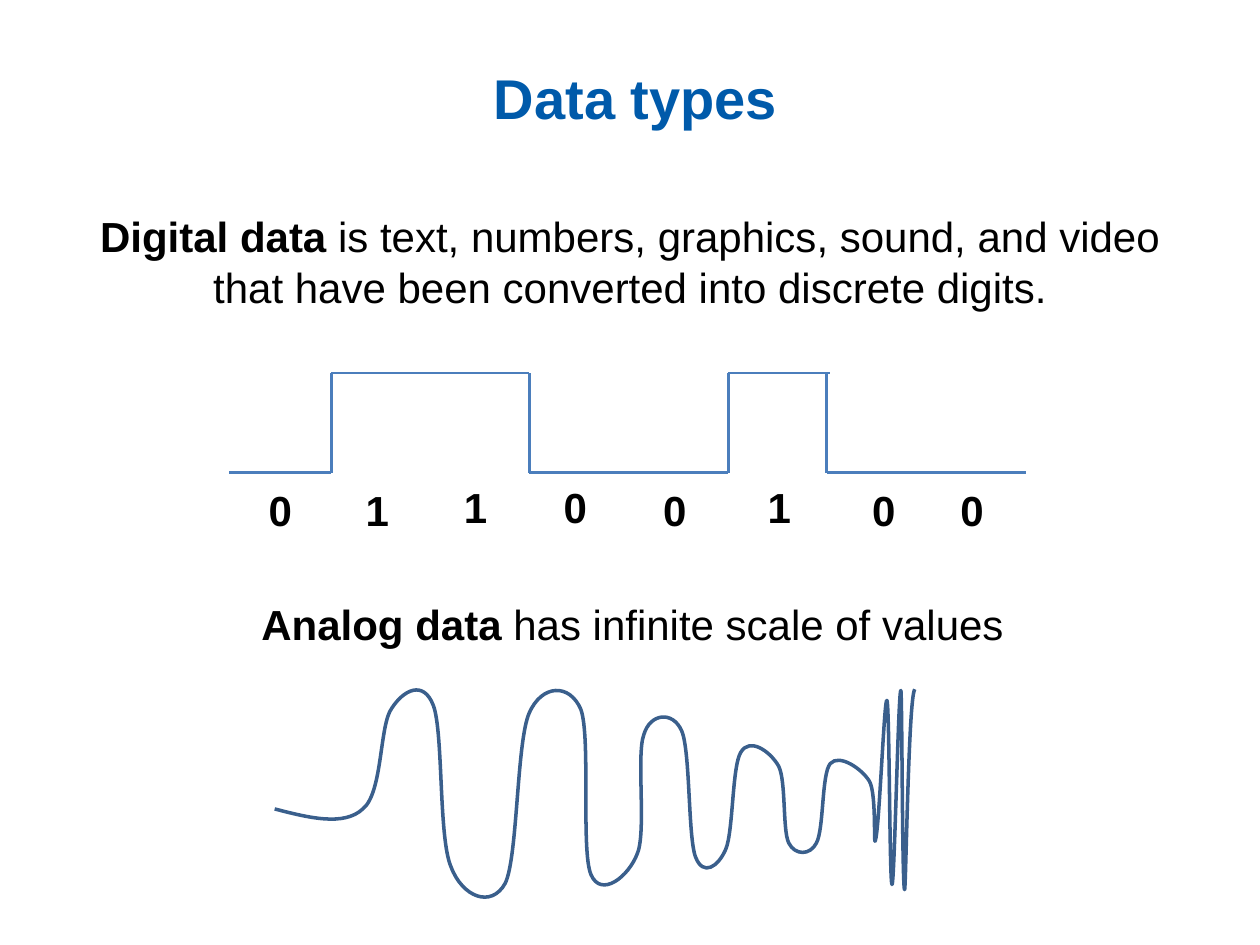
import lxml.etree
import pptx
import pptx.dml.color
import pptx.enum.shapes
import pptx.enum.text
import pptx.oxml.ns
import pptx.util

Inches = pptx.util.Inches
Pt = pptx.util.Pt
qn = pptx.oxml.ns.qn
COLORS = {"title": "005AAA", "text": "000000", "pulse": "4B7EBC", "wave": "3A5F8C"}


def color(name):
    return pptx.dml.color.RGBColor.from_string(COLORS[name])


def add_text(left, top, width, height, bold_text, plain_text="", size=24, name="text"):
    """Add a centred text box: a bold lead, then plain words."""
    box = page.shapes.add_textbox(Inches(left), Inches(top), Inches(width), Inches(height))
    box.text_frame.word_wrap = True
    para = box.text_frame.paragraphs[0]
    para.alignment = pptx.enum.text.PP_ALIGN.CENTER
    para.font.name = "Arial"
    para.font.size = Pt(size)
    para.font.color.rgb = color(name)
    for words, bold in ((bold_text, True), (plain_text, False)):
        if words:
            span = para.add_run()
            span.text = words
            span.font.bold = bold
    return box


deck = pptx.Presentation()
deck.slide_width, deck.slide_height = Inches(10), Inches(7.5)
page = deck.slides.add_slide(deck.slide_layouts[6])

title = add_text(0.05, 0, 9.99, 1.39, "Data types", size=32, name="title")
title.text_frame.margin_top = Inches(0.2)
title.text_frame.vertical_anchor = pptx.enum.text.MSO_ANCHOR.MIDDLE

digital = add_text(0.51, 1.62, 8.98, 0.91, "Digital data ",
                   "is text, numbers, graphics, sound, and video that have been "
                   "converted into discrete digits.")
analog = add_text(0.53, 4.7, 8.98, 0.5, "Analog data ", "has infinite scale of values")

# Square pulse: flat stretches, then the edges between them
HIGH, LOW = 2.96, 3.75
flats = [(1.82, 2.63, LOW), (2.63, 4.2, HIGH), (4.2, 5.78, LOW),
         (5.78, 6.59, HIGH), (6.56, 8.14, LOW)]
segments = [(start, y, end, y) for start, end, y in flats]
segments += [(x, LOW, x, HIGH) for x in (2.63, 4.2, 5.78, 6.56)]
for segment in segments:
    line = page.shapes.add_connector(pptx.enum.shapes.MSO_CONNECTOR.STRAIGHT,
                                     *[Inches(value) for value in segment])
    line.line.color.rgb = color("pulse")
    line.line.width = Pt(1.5)
    lxml.etree.SubElement(line._element.spPr, qn("a:effectLst"))

bits = [("0", 2.03, 3.79), ("1", 2.8, 3.79), ("1", 3.58, 3.77), ("0", 4.37, 3.77),
        ("0", 5.16, 3.79), ("1", 5.99, 3.77), ("0", 6.82, 3.79), ("0", 7.52, 3.79)]
bit_boxes = [add_text(left, top, 0.39, 0.5, bit) for bit, left, top in bits]
for box in bit_boxes:
    box.text_frame.word_wrap = False

for box in [digital, analog] + bit_boxes:
    box.text_frame.paragraphs[0].line_spacing = Pt(29)

# Analog wave in hundredths of an inch: two control points and an end per curve
wave_start = (218, 642)
curves = [
    ((245, 649), (273, 656), (288, 642)), ((304, 629), (301, 575), (311, 562)),
    ((320, 548), (336, 539), (344, 560)), ((352, 582), (348, 665), (358, 688)),
    ((367, 712), (390, 721), (401, 701)), ((411, 680), (410, 589), (420, 566)),
    ((430, 543), (452, 542), (461, 563)), ((469, 585), (461, 675), (469, 694)),
    ((477, 713), (499, 696), (506, 677)), ((513, 659), (505, 599), (511, 583)),
    ((516, 566), (534, 564), (541, 580)), ((548, 596), (546, 664), (552, 680)),
    ((558, 696), (570, 688), (576, 674)), ((582, 660), (581, 608), (588, 597)),
    ((595, 585), (611, 596), (618, 608)), ((624, 620), (621, 659), (626, 669)),
    ((631, 679), (643, 679), (648, 669)), ((654, 658), (652, 614), (659, 606)),
    ((666, 598), (684, 610), (690, 620)), ((696, 630), (693, 677), (695, 666)),
    ((698, 655), (702, 550), (704, 556)), ((706, 562), (706, 703), (708, 702)),
    ((710, 701), (713, 547), (715, 548)), ((716, 549), (716, 707), (718, 706)),
    ((719, 706), (721, 554), (726, 547)),
]
ends = [curve[-1] for curve in curves]
builder = page.shapes.build_freeform(*wave_start, scale=Inches(0.01))
builder.add_line_segments(ends, close=False)
wave = builder.convert_to_shape()
wave.shadow.inherit = False
wave.fill.background()
wave.line.color.rgb = color("wave")
wave.line.width = Pt(2)

# Bend each straight step of the wave into its curve
origin_x = min(x for x, y in [wave_start] + ends)
origin_y = min(y for x, y in [wave_start] + ends)
steps = list(wave._element.iter(qn("a:lnTo")))
for step, curve in zip(steps, curves):
    bend = lxml.etree.Element(qn("a:cubicBezTo"))
    for x, y in curve:
        lxml.etree.SubElement(bend, qn("a:pt"), x=str(x - origin_x), y=str(y - origin_y))
    step.getparent().replace(step, bend)

deck.save("out.pptx")
